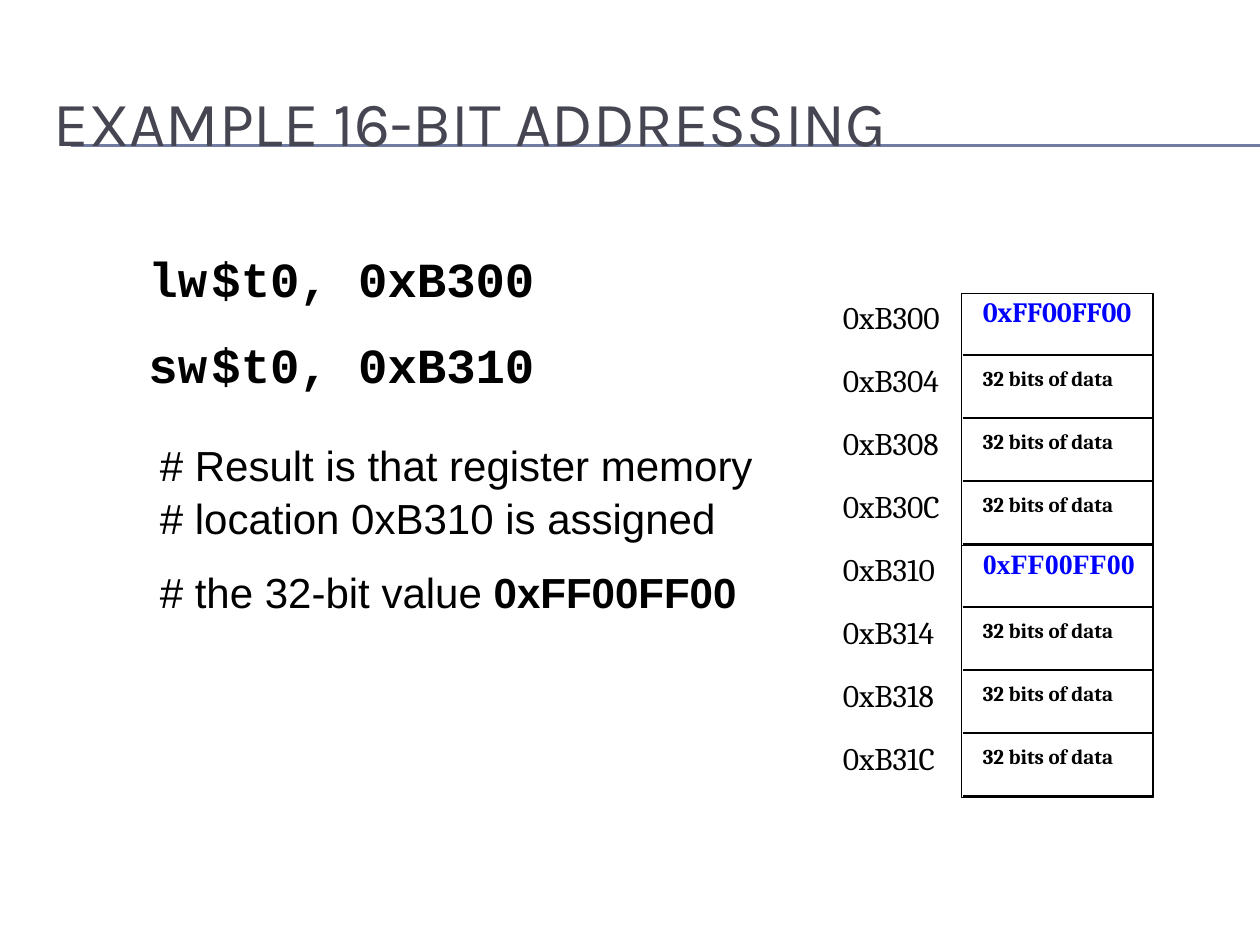
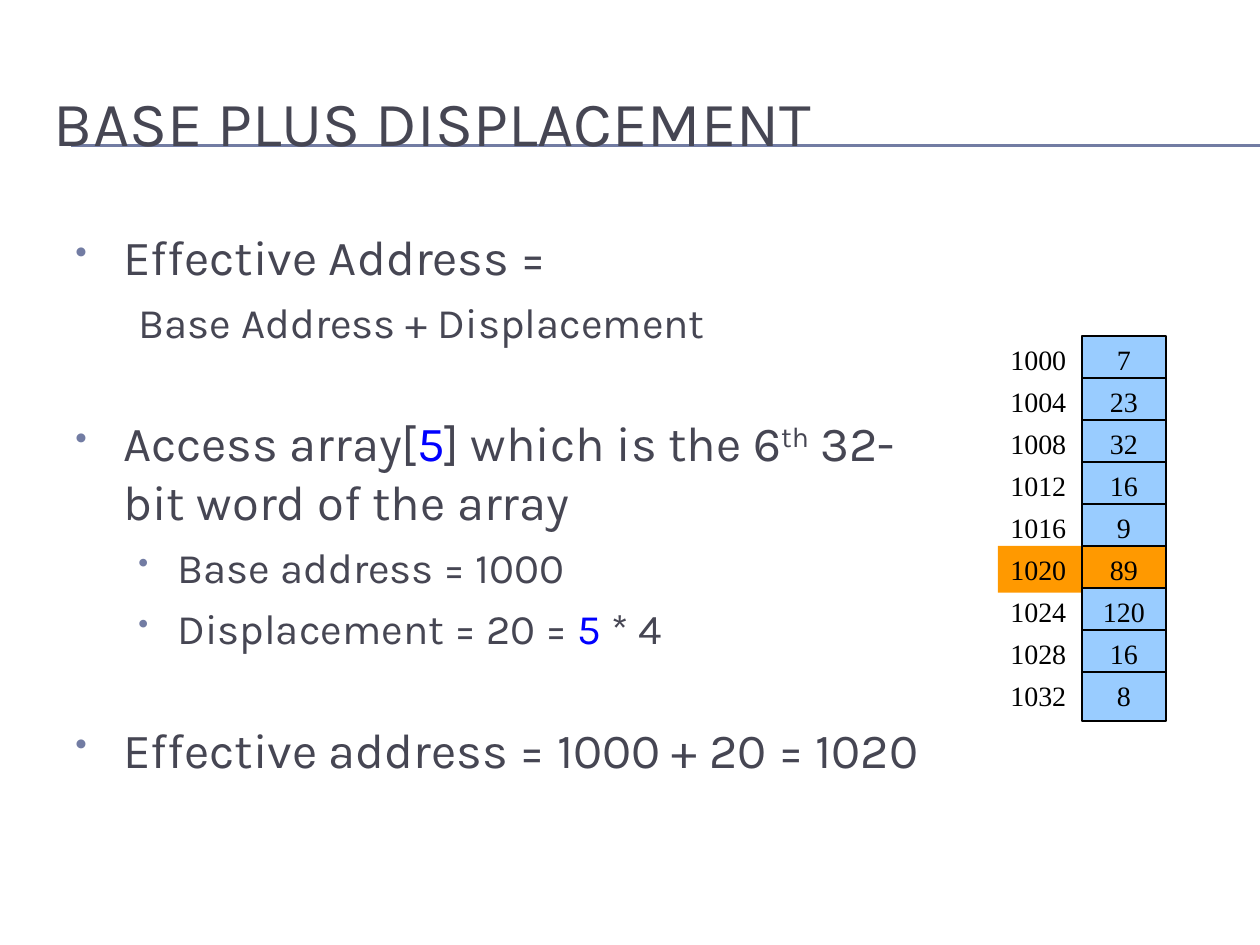
from dataclasses import dataclass

from lxml import etree
from pptx import Presentation
from pptx.dml.color import RGBColor
from pptx.enum.shapes import MSO_CONNECTOR, MSO_SHAPE
from pptx.enum.text import MSO_ANCHOR, PP_ALIGN
from pptx.oxml.ns import qn
from pptx.util import Inches, Pt

RECT = MSO_SHAPE.RECTANGLE
STRAIGHT = MSO_CONNECTOR.STRAIGHT
TOP, MIDDLE = MSO_ANCHOR.TOP, MSO_ANCHOR.MIDDLE
LEFT, CENTER = PP_ALIGN.LEFT, PP_ALIGN.CENTER


@dataclass(frozen=True)
class Theme:
    ink: str = "464653"
    accent: str = "727CA3"
    black: str = "000000"
    white: str = "FFFFFF"
    blue: str = "0000FF"
    cell: str = "99CCFF"
    hit: str = "FF9900"
    head: str = "Karla"
    code: str = "Courier New"
    note: str = "Arial"
    memory: str = "Cambria"
    array: str = "Times New Roman"
    title_size: int = 36
    body_size: int = 28
    sub_size: int = 24
    label_size: int = 18
    value_size: int = 16
    data_size: int = 12


T = Theme()


def add_text(sl, box, runs_by_par, font, size, color=T.black, bold=False, before=(0,),
             spacing=None, align=LEFT, anchor=TOP, ins=(0.1, 0.05), fill=None, line=None):
    if fill:
        sp = sl.shapes.add_shape(RECT, *map(Inches, box))
        sp.shadow.inherit = False
        sp.fill.solid()
        sp.fill.fore_color.rgb = RGBColor.from_string(fill)
        if line:
            sp.line.color.rgb = RGBColor.from_string(T.black)
            sp.line.width = Pt(line)
        else:
            sp.line.fill.background()
    else:
        sp = sl.shapes.add_textbox(*map(Inches, box))
    tf = sp.text_frame
    tf.word_wrap = True
    tf.vertical_anchor = anchor
    tf.margin_left = tf.margin_right = Inches(ins[0])
    tf.margin_top = tf.margin_bottom = Inches(ins[1])
    for i, runs in enumerate(runs_by_par):
        p = tf.add_paragraph() if i else tf.paragraphs[0]
        p.alignment = align
        p.space_before = Pt(before[min(i, len(before) - 1)])
        p.line_spacing = spacing
        p.font.name, p.font.size, p.font.bold = font, Pt(size), bold
        p.font.color.rgb = RGBColor.from_string(color)
        for run in [runs] if isinstance(runs, str) else runs:
            text, style = (run, None) if isinstance(run, str) else run
            r = p.add_run()
            r.text = text
            if style == "bold":
                r.font.bold = True
            elif style == "super":
                r.font._element.set("baseline", "30000")
            elif style:
                r.font.color.rgb = RGBColor.from_string(style)
    return tf


def add_line(sl, x1, x2, y, color, width):
    ln = sl.shapes.add_connector(STRAIGHT, *map(Inches, (x1, y, x2, y)))
    ln.line.color.rgb = RGBColor.from_string(color)
    ln.line.width = Pt(width)
    etree.SubElement(ln._element.spPr, qn("a:effectLst"))


prs = Presentation()
W, H = 10, 7.5
prs.slide_width, prs.slide_height = Inches(W), Inches(H)

slides = []
for title in ("EXAMPLE 16-BIT ADDRESSING", "BASE PLUS DISPLACEMENT"):
    sl = prs.slides.add_slide(prs.slide_layouts[6])
    for y in (1.15, 1.16):
        add_line(sl, 0.56, W, y, T.accent, 0.75)
    add_text(sl, (0.33, 0.5, 0.95 * W, 0.92), [title], T.head, T.title_size, T.ink,
             anchor=MIDDLE)
    slides.append(sl)
addressing, displacement = slides

ROW = H / 15
MEM_X, MEM_Y, MEM_W, BLOCK_ROWS = 7.63, 2.33, 1.52, 4
TIGHT = (0.02, 0.03)
values = {0: T.memory, 4: T.array}
for i in range(2 * BLOCK_ROWS):
    y = MEM_Y + i * ROW
    if i % BLOCK_ROWS == 0:
        add_text(addressing, (MEM_X, y, MEM_W, BLOCK_ROWS * ROW), [], T.memory,
                 T.data_size, fill=T.white, line=1)
    add_line(addressing, MEM_X + 0.01, MEM_X + MEM_W - 0.01, y + ROW - 0.01, T.black, 1)
    add_text(addressing, (6.67, y + 0.01, 0.84, 0.41), [f"0x{0xB300 + 4 * i:X}"],
             T.memory, T.label_size, spacing=Pt(21), ins=TIGHT)
    if i in values:
        text, font, size, color = "0xFF00FF00", values[i], T.value_size, T.blue
    else:
        text, font, size, color = "32 bits of data", T.memory, T.data_size, T.black
    add_text(addressing, (7.78, y + 0.05, 1.72, 0.44), [text], font, size, color,
             bold=True, spacing=Pt(14), ins=TIGHT)

add_text(addressing, (1.08, 1.92, 3.92, 1.27), ["lw\t$t0, 0xB300", "sw\t$t0, 0xB310"],
         T.code, T.body_size, bold=True, before=(5, 16))
add_text(addressing, (1.17, 3.42, 5.08, 2.1),
         ["# Result is that register memory # location 0xB310 is assigned",
          ["# the 32-bit value ", ("0xFF00FF00", "bold")]],
         T.note, T.sub_size, before=(2, 12), spacing=1.05)

outline = [
    (0, True, 2, "Effective Address ="),
    (1, False, 6, "Base Address + Displacement"),
    (0, True, 38, ["Access array[", ("5", T.blue), "] which is the 6", ("th", "super"),
                   " 32-bit word of the array"]),
    (1, True, 6, "Base address = 1000"),
    (1, True, 6, ["Displacement = 20 = ", ("5", T.blue), " * 4"]),
    (0, True, 38, "Effective address = 1000 + 20 = 1020"),
]
tf = add_text(displacement, (0.5, 1.75, 7.08, 4.95), [item[3] for item in outline],
              T.head, T.body_size, T.ink, before=[item[2] for item in outline])
for p, (level, bullet, _, _) in zip(tf.paragraphs, outline):
    p.level = level
    p.font.size = Pt((T.body_size, T.sub_size)[level])
    margin, hang = ((0.38, 0.38), (0.81, 0.31))[level]
    pPr = p._p.get_or_add_pPr()
    pPr.set("marL", str(Inches(margin)))
    pPr.set("indent", str(-Inches(hang)))
    if bullet:
        marks = [etree.Element(qn(f"a:{tag}")) for tag in ("buClr", "buSzPct", "buChar")]
        etree.SubElement(marks[0], qn("a:srgbClr")).set("val", T.accent)
        marks[1].set("val", "70000")
        marks[2].set("char", "•")
        at = list(pPr).index(pPr.find(qn("a:defRPr")))
        pPr[at:at] = marks

COL = W / 15
STEP = COL / 2
ARRAY_X, ARRAY_Y = 7.92, 4 * COL
for i, value in enumerate((7, 23, 32, 16, 9, 89, 120, 16, 8)):
    y = ARRAY_Y + i * STEP
    hit = T.hit if i == 5 else None
    add_text(displacement, (ARRAY_X, y, COL, 0.37), [str(1000 + 4 * i)], T.array,
             T.value_size, before=(2,), fill=hit)
    add_text(displacement, (ARRAY_X + COL, y, COL, 0.39), [str(value)], T.array,
             T.value_size, before=(2,), align=CENTER, fill=hit or T.cell, line=1.25)

prs.save("out.pptx")
